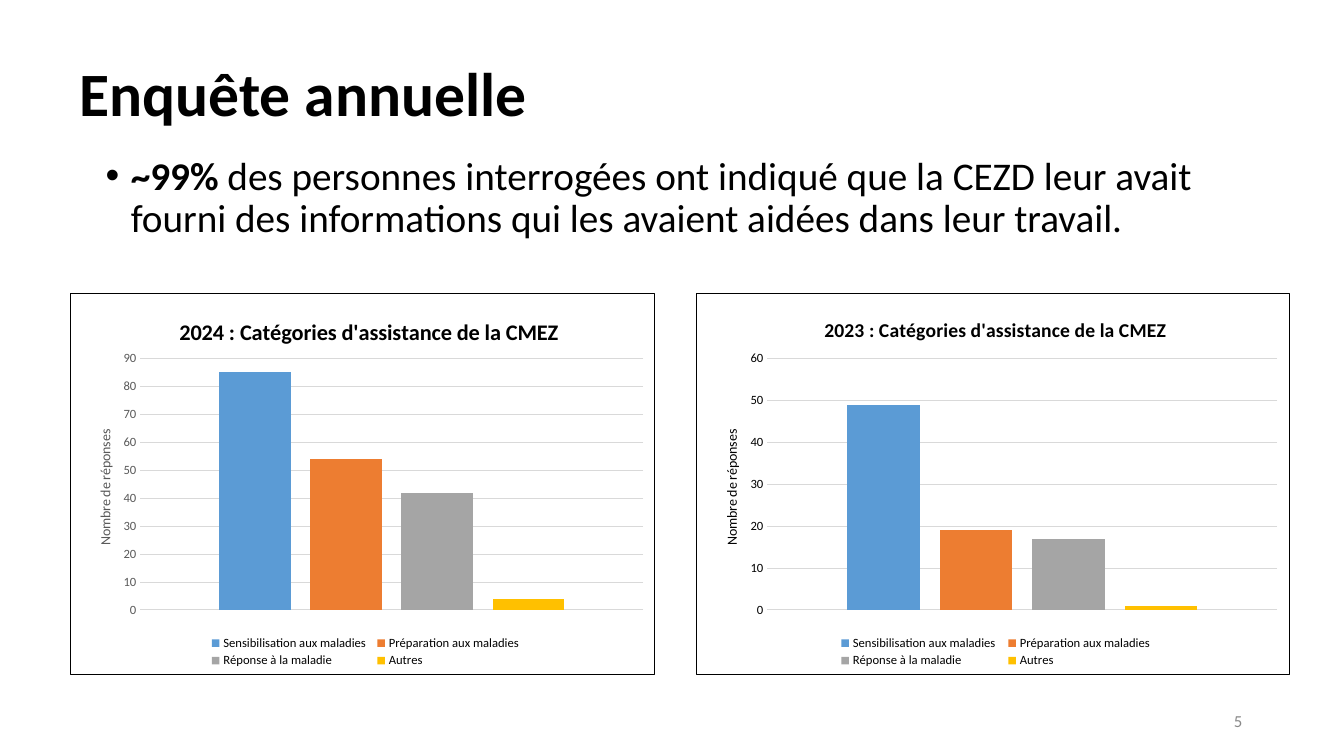
from dataclasses import dataclass

from lxml import etree
from pptx import Presentation
from pptx import util as u
from pptx.chart.data import CategoryChartData
from pptx.dml.color import RGBColor
from pptx.enum import chart as ch
from pptx.enum import text
from pptx.oxml import parse_xml
from pptx.oxml.ns import nsdecls, qn

BLACK = RGBColor(0x00, 0x00, 0x00)
WHITE = RGBColor(0xFF, 0xFF, 0xFF)
AXIS_GREY = RGBColor(0x59, 0x59, 0x59)
GRID_GREY = RGBColor(0xD9, 0xD9, 0xD9)
NUMBER_GREY = RGBColor(0x89, 0x89, 0x89)
FONT = "Calibri"

CATEGORIES = (
    ("Sensibilisation aux maladies", RGBColor(0x5B, 0x9B, 0xD5)),
    ("Préparation aux maladies", RGBColor(0xED, 0x7D, 0x31)),
    ("Réponse à la maladie", RGBColor(0xA5, 0xA5, 0xA5)),
    ("Autres", RGBColor(0xFF, 0xC0, 0x00)),
)


@dataclass
class Survey:
    year: int
    left: float
    width: float
    responses: tuple[int, ...]
    axis_max: int
    title_size: int
    title_x: float
    axis_color: RGBColor
    filled: bool


SURVEYS = (
    Survey(2024, 0.69, 5.81, (85, 54, 42, 4), 90, 16, 0.18, AXIS_GREY, False),
    Survey(2023, 6.9, 5.89, (49, 19, 17, 1), 60, 14, 0.21, BLACK, True),
)


def style(font, size: float, color: RGBColor, bold: bool | None = None) -> None:
    font.name = FONT
    font.size = u.Pt(size)
    font.color.rgb = color
    font.bold = bold


def place(part, index: int, inner: bool = False, **fractions: float) -> None:
    for old in part.findall(qn("c:layout")):
        part.remove(old)
    layout = etree.Element(qn("c:layout"))
    manual = etree.SubElement(layout, qn("c:manualLayout"))
    if inner:
        etree.SubElement(manual, qn("c:layoutTarget"), val="inner")
    for mode in ("xMode", "yMode"):
        etree.SubElement(manual, qn(f"c:{mode}"), val="edge")
    for name, value in fractions.items():
        etree.SubElement(manual, qn(f"c:{name}"), val=str(value))
    part.insert(index, layout)


def frame_chart(chart, filled: bool) -> None:
    fill = f'<a:solidFill><a:srgbClr val="{WHITE}"/></a:solidFill>' if filled else "<a:noFill/>"
    border = parse_xml(
        f'<c:spPr {nsdecls("c", "a")}>{fill}<a:ln w="9525"><a:solidFill>'
        f'<a:srgbClr val="{BLACK}"/></a:solidFill></a:ln></c:spPr>'
    )
    chart.element.find(qn("c:chart")).addnext(border)


def add_survey_chart(slide, survey: Survey) -> None:
    data = CategoryChartData()
    data.categories = ["1"]
    for (name, _), count in zip(CATEGORIES, survey.responses):
        data.add_series(name, [count])
    chart = slide.shapes.add_chart(
        ch.XL_CHART_TYPE.COLUMN_CLUSTERED,
        u.Inches(survey.left), u.Inches(2.91), u.Inches(survey.width), u.Inches(3.79), data,
    ).chart
    style(chart.font, 10, BLACK)
    frame_chart(chart, survey.filled)

    heading = chart.chart_title.text_frame.paragraphs[0]
    heading.text = f"{survey.year} : Catégories d'assistance de la CMEZ"
    style(heading.font, survey.title_size, BLACK, True)
    place(chart.chart_title._element, 1, x=survey.title_x, y=0.05)

    columns = chart.plots[0]
    columns.gap_width = 219
    columns.overlap = -27
    columns.vary_by_categories = False
    for series, (_, color) in zip(columns.series, CATEGORIES):
        series.format.fill.solid()
        series.format.fill.fore_color.rgb = color
    place(chart.element.find(".//" + qn("c:plotArea")), 0, True, x=0.12, y=0.17, w=0.86, h=0.66)

    chart.category_axis.visible = False
    counts = chart.value_axis
    counts.minimum_scale = 0
    counts.maximum_scale = survey.axis_max
    counts.major_unit = 10
    counts.major_tick_mark = ch.XL_TICK_MARK.NONE
    counts.format.line.fill.background()
    counts.major_gridlines.format.line.color.rgb = GRID_GREY
    counts.major_gridlines.format.line.width = u.Pt(0.75)
    style(counts.tick_labels.font, 9, survey.axis_color)

    caption_frame = counts.axis_title.text_frame
    caption_frame._txBody.bodyPr.set("rot", "-5400000")
    caption = caption_frame.paragraphs[0]
    caption.text = "Nombre de réponses"
    style(caption.font, 10, survey.axis_color, False)
    place(counts.axis_title._element, 1, x=0.04, y=0.35)

    chart.has_legend = True
    legend = chart.legend
    legend.position = ch.XL_LEGEND_POSITION.BOTTOM
    legend.include_in_layout = False
    style(legend.font, 9, BLACK)
    place(legend._element, 1, x=0.23, y=0.89, w=0.55, h=0.1)


def add_title(slide) -> None:
    title = slide.shapes.title
    title.left, title.top = u.Inches(0.69), u.Inches(0.23)
    title.width, title.height = u.Inches(11.5), u.Inches(1.45)
    title.text_frame.vertical_anchor = text.MSO_ANCHOR.MIDDLE
    heading = title.text_frame.paragraphs[0]
    heading.text = "Enquête annuelle"
    heading.alignment = text.PP_ALIGN.LEFT
    heading.line_spacing = 0.9
    style(heading.font, 44, BLACK, True)


def add_finding(slide) -> None:
    box = slide.shapes.add_textbox(u.Inches(0.95), u.Inches(1.5), u.Inches(11.5), u.Inches(1.46))
    box.text_frame.word_wrap = True
    finding = box.text_frame.paragraphs[0]
    finding.line_spacing = 0.9
    properties = finding._p.get_or_add_pPr()
    properties.set("marL", str(u.Inches(0.25)))
    properties.set("indent", str(u.Inches(-0.25)))
    etree.SubElement(properties, qn("a:buFont"), typeface="Arial")
    etree.SubElement(properties, qn("a:buChar"), char="•")
    style(finding.font, 28, BLACK)
    share = finding.add_run()
    share.text = "~99% "
    share.font.bold = True
    finding.add_run().text = (
        "des personnes interrogées ont indiqué que la CEZD leur avait "
        "fourni des informations qui les avaient aidées dans leur travail."
    )


def add_page_number(slide) -> None:
    box = slide.shapes.add_textbox(u.Inches(9.42), u.Inches(6.95), u.Inches(3), u.Inches(0.4))
    box.text_frame.word_wrap = True
    box.text_frame.vertical_anchor = text.MSO_ANCHOR.MIDDLE
    number = box.text_frame.paragraphs[0]
    number.text = "5"
    number.alignment = text.PP_ALIGN.RIGHT
    style(number.font, 12, NUMBER_GREY)


def main() -> None:
    deck = Presentation()
    deck.slide_width, deck.slide_height = u.Inches(13.33), u.Inches(7.5)
    slide = deck.slides.add_slide(deck.slide_layouts[5])
    add_title(slide)
    add_page_number(slide)
    for survey in SURVEYS:
        add_survey_chart(slide, survey)
    add_finding(slide)
    deck.save("out.pptx")


if __name__ == "__main__":
    main()
